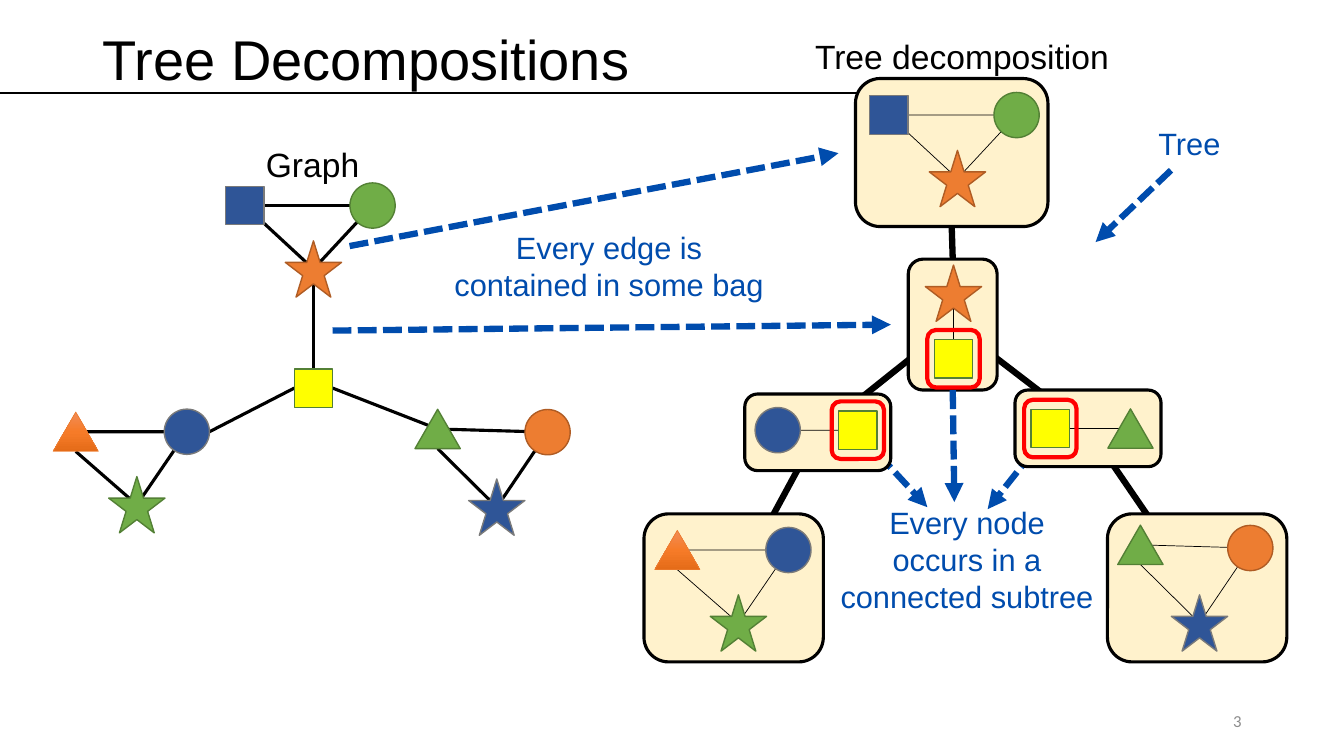
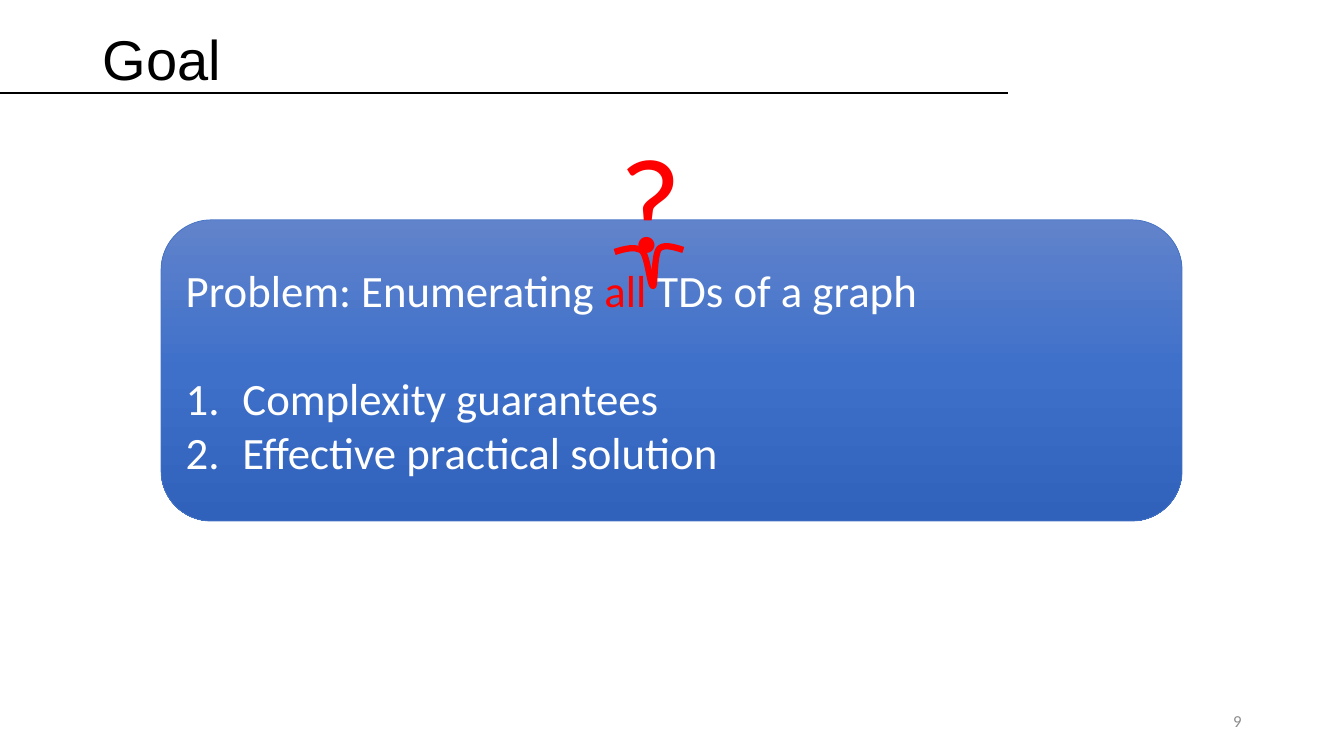
from copy import deepcopy
from dataclasses import dataclass
from typing import Optional

from lxml import etree
from pptx import Presentation
from pptx.dml.color import RGBColor
from pptx.enum.dml import MSO_LINE
from pptx.enum.shapes import MSO_CONNECTOR, MSO_SHAPE
from pptx.enum.text import MSO_ANCHOR, MSO_AUTO_SIZE, PP_ALIGN
from pptx.oxml.ns import qn
from pptx.util import Cm, Pt

BLACK = RGBColor(0x00, 0x00, 0x00)
WHITE = RGBColor(0xFF, 0xFF, 0xFF)
GRAY = RGBColor(0x8C, 0x8C, 0x8C)
RED = RGBColor(0xFF, 0x00, 0x00)
NOTE_BLUE = RGBColor(0x00, 0x4C, 0xAD)
BAG_FILL = RGBColor(0xFF, 0xF2, 0xCC)
BLUE = RGBColor(0x2F, 0x55, 0x97)
BLUE_EDGE = RGBColor(0x7A, 0x7A, 0x7A)
GREEN = RGBColor(0x70, 0xAD, 0x47)
GREEN_EDGE = RGBColor(0x53, 0x80, 0x35)
ORANGE = RGBColor(0xED, 0x7D, 0x31)
ORANGE_EDGE = RGBColor(0xAF, 0x5C, 0x24)
YELLOW = RGBColor(0xFF, 0xFF, 0x00)
PANEL_EDGE = RGBColor(0x44, 0x72, 0xC4)
ORANGE_GRADIENT = (RGBColor(0xF1, 0x8C, 0x57), RGBColor(0xF6, 0x7B, 0x28), RGBColor(0xE5, 0x6C, 0x19))
PANEL_GRADIENT = (RGBColor(0x61, 0x83, 0xCB), RGBColor(0x3E, 0x70, 0xCA), RGBColor(0x30, 0x62, 0xBB))

CIRCLE = MSO_SHAPE.OVAL
SQUARE = MSO_SHAPE.RECTANGLE
STAR = MSO_SHAPE.STAR_5_POINT
TRIANGLE = MSO_SHAPE.ISOSCELES_TRIANGLE
ROUNDED = MSO_SHAPE.ROUNDED_RECTANGLE
STRAIGHT = MSO_CONNECTOR.STRAIGHT
SHORT_DASH = MSO_LINE.SQUARE_DOT
MIDDLE = MSO_ANCHOR.MIDDLE
NO_AUTOFIT = MSO_AUTO_SIZE.NONE
LEFT_ALIGN, CENTER_ALIGN, RIGHT_ALIGN = PP_ALIGN.LEFT, PP_ALIGN.CENTER, PP_ALIGN.RIGHT

TOP, LEFT, BOTTOM, RIGHT, CENTER = range(5)
SITE_FRACTIONS = ((0.5, 0), (0, 0.5), (0.5, 1), (1, 0.5), (0.5, 0.5))
NODE_SIZES = {CIRCLE: (1.14, 1.14), SQUARE: (0.97, 0.97), STAR: (1.42, 1.42), TRIANGLE: (1.14, 0.99)}
TITLE_ONLY = 5


@dataclass(frozen=True)
class Paint:
    fill: Optional[RGBColor]
    line: RGBColor
    line_width: float = 1
    gradient: tuple = ()


@dataclass(frozen=True)
class Node:
    kind: MSO_SHAPE
    paint: Paint
    dx: float = 0
    dy: float = 0


@dataclass(frozen=True)
class Edge:
    start: int
    end: int
    start_site: int = CENTER
    end_site: int = CENTER


@dataclass(frozen=True)
class Cluster:
    nodes: tuple
    edges: tuple = ()


@dataclass(frozen=True)
class Label:
    text: str
    box: tuple
    size: float
    color: RGBColor
    align: PP_ALIGN = LEFT_ALIGN
    font: str = "Arial"


BLUE_PAINT = Paint(BLUE, BLUE_EDGE)
GREEN_PAINT = Paint(GREEN, GREEN_EDGE)
ORANGE_PAINT = Paint(ORANGE, ORANGE_EDGE)
YELLOW_PAINT = Paint(YELLOW, GREEN_EDGE)
GLOSSY_PAINT = Paint(None, ORANGE, 0.5, ORANGE_GRADIENT)
BAG_PAINT = Paint(BAG_FILL, BLACK, 2.25)
RING_PAINT = Paint(None, RED, 3)
PANEL_PAINT = Paint(None, PANEL_EDGE, 0.5, PANEL_GRADIENT)

TRIANGLE_TRIO_EDGES = (Edge(0, 1), Edge(0, 2), Edge(1, 2, BOTTOM))
UPPER_TRIO = Cluster(
    (Node(SQUARE, BLUE_PAINT, -1.73), Node(CIRCLE, GREEN_PAINT, 1.49), Node(STAR, ORANGE_PAINT, 0, 1.6)),
    (Edge(0, 1, RIGHT), Edge(0, 2), Edge(1, 2)))
LEFT_TRIO = Cluster(
    (Node(CIRCLE, BLUE_PAINT, 1.26), Node(TRIANGLE, GLOSSY_PAINT, -1.54), Node(STAR, GREEN_PAINT, 0, 1.84)),
    TRIANGLE_TRIO_EDGES)
RIGHT_TRIO = Cluster(
    (Node(CIRCLE, ORANGE_PAINT, 1.28, 0.04), Node(TRIANGLE, GREEN_PAINT, -1.49, -0.04),
     Node(STAR, BLUE_PAINT, 0, 1.93)),
    TRIANGLE_TRIO_EDGES)
HUB = Cluster((Node(SQUARE, YELLOW_PAINT),))
STAR_PAIR = Cluster((Node(SQUARE, YELLOW_PAINT, 0, 1.65), Node(STAR, ORANGE_PAINT)), (Edge(1, 0, CENTER, TOP),))
CIRCLE_PAIR = Cluster((Node(SQUARE, YELLOW_PAINT, 2.02), Node(CIRCLE, BLUE_PAINT)), (Edge(1, 0, CENTER, LEFT),))
TRIANGLE_PAIR = Cluster((Node(SQUARE, YELLOW_PAINT), Node(TRIANGLE, GREEN_PAINT, 2.02)), (Edge(0, 1, RIGHT),))

BAG_BOXES = (
    (21.56, 1.98, 4.85, 3.73), (22.89, 6.53, 2.24, 3.3), (18.77, 9.93, 3.68, 1.93),
    (25.58, 9.83, 3.68, 1.93), (16.23, 12.95, 4.52, 3.73), (27.91, 12.95, 4.52, 3.73))
BAG_EDGES = (Edge(0, 1, BOTTOM, TOP), Edge(1, 2), Edge(1, 3), Edge(2, 4), Edge(3, 5))
BAG_TRIOS = ((UPPER_TRIO, (24.13, 2.9)), (LEFT_TRIO, (18.61, 13.86)), (RIGHT_TRIO, (30.23, 13.77)))
BAG_PAIRS = ((STAR_PAIR, (24.03, 7.39)), (CIRCLE_PAIR, (19.6, 10.84)), (TRIANGLE_PAIR, (26.47, 10.8)))

ARROWS_BEHIND = (((26.42, 10.9), (24.89, 12.83)), ((21.69, 10.97), (23.37, 12.78)))
ARROWS = (((29.51, 4.29), (27.61, 6.1)), ((8.81, 6.2), (21.13, 3.86)), ((8.38, 8.33), (22.45, 8.18)))

LABELS = (
    Label("Every edge is\ncontained in some bag", (10.64, 5.64, 9.42, 2.13), 22, NOTE_BLUE, CENTER_ALIGN),
    Label("Tree", (28.22, 3.02, 3.51, 1.19), 22, NOTE_BLUE, CENTER_ALIGN),
    Label("Every node\noccurs in a connected subtree", (20.85, 12.57, 7.04, 3.07), 22, NOTE_BLUE, CENTER_ALIGN),
    Label("Graph", (6.45, 3.51, 2.9, 1.27), 24, BLACK),
    Label("Tree decomposition", (20.29, 0.79, 8.1, 1.27), 24, BLACK))

HOOK_START = (15.49, 6.35)
HOOK_CURVES = (
    ((15.75, 6.27), (16, 6.2), (16.18, 6.32)), ((16.33, 6.48), (16.38, 7.21), (16.46, 7.21)),
    ((16.51, 7.19), (16.48, 6.43), (16.61, 6.27)), ((16.74, 6.15), (16.97, 6.22), (17.22, 6.3)))
CURVE_STEPS = 12


def add_run(paragraph, text: str, size: float, color: RGBColor, font: str) -> None:
    run = paragraph.add_run()
    run.text = text
    run.font.size, run.font.name = Pt(size), font
    run.font.color.rgb = color


def add_label(slide, label: Label):
    text_box = slide.shapes.add_textbox(*map(Cm, label.box))
    text_box.text_frame.word_wrap = True
    paragraph = text_box.text_frame.paragraphs[0]
    paragraph.alignment = label.align
    for index, line in enumerate(label.text.split("\n")):
        if index:
            paragraph.add_line_break()
        add_run(paragraph, line, label.size, label.color, label.font)
    return text_box


def fill_gradient(shape, colors: tuple) -> None:
    shape.fill.gradient()
    shape.fill.gradient_angle = 270
    stop_list = shape.element.find(".//" + qn("a:gsLst"))
    stop_list.insert(1, deepcopy(stop_list[0]))
    for index, (stop, color) in enumerate(zip(shape.fill.gradient_stops, colors)):
        stop.color.rgb = color
        stop.position = index / 2


def apply_paint(shape, paint: Paint) -> None:
    shape.shadow.inherit = False
    if paint.gradient:
        fill_gradient(shape, paint.gradient)
    elif paint.fill is None:
        shape.fill.background()
    else:
        shape.fill.solid()
        shape.fill.fore_color.rgb = paint.fill
    shape.line.color.rgb = paint.line
    shape.line.width = Pt(paint.line_width)


def add_painted_shape(slide, kind: MSO_SHAPE, box: tuple, paint: Paint):
    shape = slide.shapes.add_shape(kind, *map(Cm, box))
    apply_paint(shape, paint)
    return shape


def add_line(slide, start: tuple, end: tuple, color: RGBColor, width: float, arrow: bool = False):
    connector = slide.shapes.add_connector(STRAIGHT, *start, *end)
    connector.line.color.rgb = color
    connector.line.width = Pt(width)
    properties = connector.element.find(qn("p:spPr"))
    if arrow:
        connector.line.dash_style = SHORT_DASH
        etree.SubElement(properties.find(qn("a:ln")), qn("a:tailEnd"), type="triangle")
    etree.SubElement(properties, qn("a:effectLst"))
    return connector


def add_arrow(slide, start: tuple, end: tuple):
    return add_line(slide, tuple(map(Cm, start)), tuple(map(Cm, end)), NOTE_BLUE, 4.5, True)


def site_point(shape, site: int) -> tuple:
    across, down = SITE_FRACTIONS[site]
    return int(shape.left + shape.width * across), int(shape.top + shape.height * down)


def link_shapes(slide, shapes: list, edges: tuple, width: float) -> None:
    for edge in edges:
        start, end = shapes[edge.start], shapes[edge.end]
        connector = add_line(slide, site_point(start, edge.start_site), site_point(end, edge.end_site), BLACK, width)
        for shape, site, connect in ((start, edge.start_site, connector.begin_connect),
                                     (end, edge.end_site, connector.end_connect)):
            if site != CENTER and shape.auto_shape_type in (SQUARE, ROUNDED):
                connect(shape, site)
        shapes[0].element.addprevious(connector.element)


def centered_box(center_x: float, center_y: float, width: float, height: float) -> tuple:
    return center_x - width / 2, center_y - height / 2, width, height


def draw_cluster(slide, cluster: Cluster, origin: tuple, edge_width: float) -> list:
    shapes = [
        add_painted_shape(slide, node.kind,
                          centered_box(origin[0] + node.dx, origin[1] + node.dy, *NODE_SIZES[node.kind]), node.paint)
        for node in cluster.nodes]
    link_shapes(slide, shapes, cluster.edges, edge_width)
    return shapes


def add_titled_slide(presentation, title: str, number: str):
    slide = presentation.slides.add_slide(presentation.slide_layouts[TITLE_ONLY])
    placeholder = slide.shapes.title
    placeholder.left, placeholder.top, placeholder.width, placeholder.height = map(Cm, (2.33, 0.4, 29.21, 2.33))
    frame = placeholder.text_frame
    frame.vertical_anchor, frame.auto_size = MIDDLE, NO_AUTOFIT
    paragraph = frame.paragraphs[0]
    paragraph.alignment, paragraph.line_spacing = LEFT_ALIGN, 0.9
    add_run(paragraph, title, 40, BLACK, "Arial")
    add_line(slide, (0, Cm(2.34)), (Cm(25.4), Cm(2.34)), BLACK, 1)
    footer = add_label(slide, Label(number, (23.92, 17.66, 7.62, 1.01), 12, GRAY, RIGHT_ALIGN, "Calibri"))
    footer.text_frame.vertical_anchor = MIDDLE
    return slide


def draw_graph(slide) -> None:
    hub = draw_cluster(slide, HUB, (7.9, 9.78), 2.25)[0]
    upper = draw_cluster(slide, UPPER_TRIO, (7.9, 5.18), 2.25)
    left = draw_cluster(slide, LEFT_TRIO, (3.45, 10.88), 2.25)
    right = draw_cluster(slide, RIGHT_TRIO, (12.52, 10.85), 2.25)
    neighbours = [hub, upper[2], left[0], right[1]]
    link_shapes(slide, neighbours, (Edge(1, 0, CENTER, TOP), Edge(2, 0, RIGHT, LEFT), Edge(3, 0, CENTER, RIGHT)), 2.25)


def draw_tree(slide) -> None:
    for start, end in ARROWS_BEHIND:
        add_arrow(slide, start, end)
    bags = [add_painted_shape(slide, ROUNDED, box, BAG_PAINT) for box in BAG_BOXES]
    link_shapes(slide, bags, BAG_EDGES, 4.5)
    for cluster, origin in BAG_TRIOS:
        draw_cluster(slide, cluster, origin, 0.5)
    for cluster, origin in BAG_PAIRS:
        draw_cluster(slide, cluster, origin, 0.5)
        shared = cluster.nodes[0]
        ring_box = centered_box(origin[0] + shared.dx, origin[1] + shared.dy, 1.32, 1.45)
        add_painted_shape(slide, ROUNDED, ring_box, RING_PAINT)
    add_arrow(slide, (24.01, 9.83), (24.05, 12.65)).begin_connect(bags[1], BOTTOM)


def build_decomposition_slide(presentation) -> None:
    slide = add_titled_slide(presentation, "Tree Decompositions", "3")
    draw_graph(slide)
    draw_tree(slide)
    for start, end in ARROWS:
        add_arrow(slide, start, end)
    for label in LABELS:
        add_label(slide, label)


def curve_point(points: tuple, t: float) -> tuple:
    weights = ((1 - t) ** 3, 3 * t * (1 - t) ** 2, 3 * t ** 2 * (1 - t), t ** 3)
    return tuple(Cm(sum(w * point[axis] for w, point in zip(weights, points))) for axis in (0, 1))


def draw_hook(slide) -> None:
    vertices, start = [], HOOK_START
    for curve in HOOK_CURVES:
        vertices += [curve_point((start, *curve), step / CURVE_STEPS) for step in range(1, CURVE_STEPS + 1)]
        start = curve[-1]
    builder = slide.shapes.build_freeform(*map(Cm, HOOK_START))
    builder.add_line_segments(vertices, close=False)
    apply_paint(builder.convert_to_shape(), Paint(None, RED, 4.5))


def build_goal_slide(presentation) -> None:
    slide = add_titled_slide(presentation, "Goal", "9")
    panel = add_painted_shape(slide, ROUNDED, (4.06, 5.54, 25.73, 7.59), PANEL_PAINT)
    frame = panel.text_frame
    frame.vertical_anchor = MIDDLE
    paragraph = frame.paragraphs[0]
    paragraph.alignment = LEFT_ALIGN
    for text, color in (("Problem: Enumerating ", WHITE), ("all", RED), (" TDs of a graph", WHITE)):
        add_run(paragraph, text, 32, color, "Calibri")
    for text, gap in (("Complexity guarantees", 39), ("Effective practical solution", 0)):
        paragraph = frame.add_paragraph()
        paragraph.alignment, paragraph.space_before = LEFT_ALIGN, Pt(gap)
        properties = paragraph._p.get_or_add_pPr()
        properties.set("marL", str(Cm(1.43)))
        properties.set("indent", str(-Cm(1.43)))
        etree.SubElement(properties, qn("a:buAutoNum"), type="arabicPeriod")
        add_run(paragraph, text, 32, WHITE, "Calibri")
    add_label(slide, Label("?", (15.37, 2.84, 1.96, 4.37), 96, RED, font="Calibri"))
    draw_hook(slide)


def main() -> None:
    presentation = Presentation()
    presentation.slide_width, presentation.slide_height = Cm(33.87), Cm(19.05)
    build_decomposition_slide(presentation)
    build_goal_slide(presentation)
    presentation.save("out.pptx")


if __name__ == "__main__":
    main()
